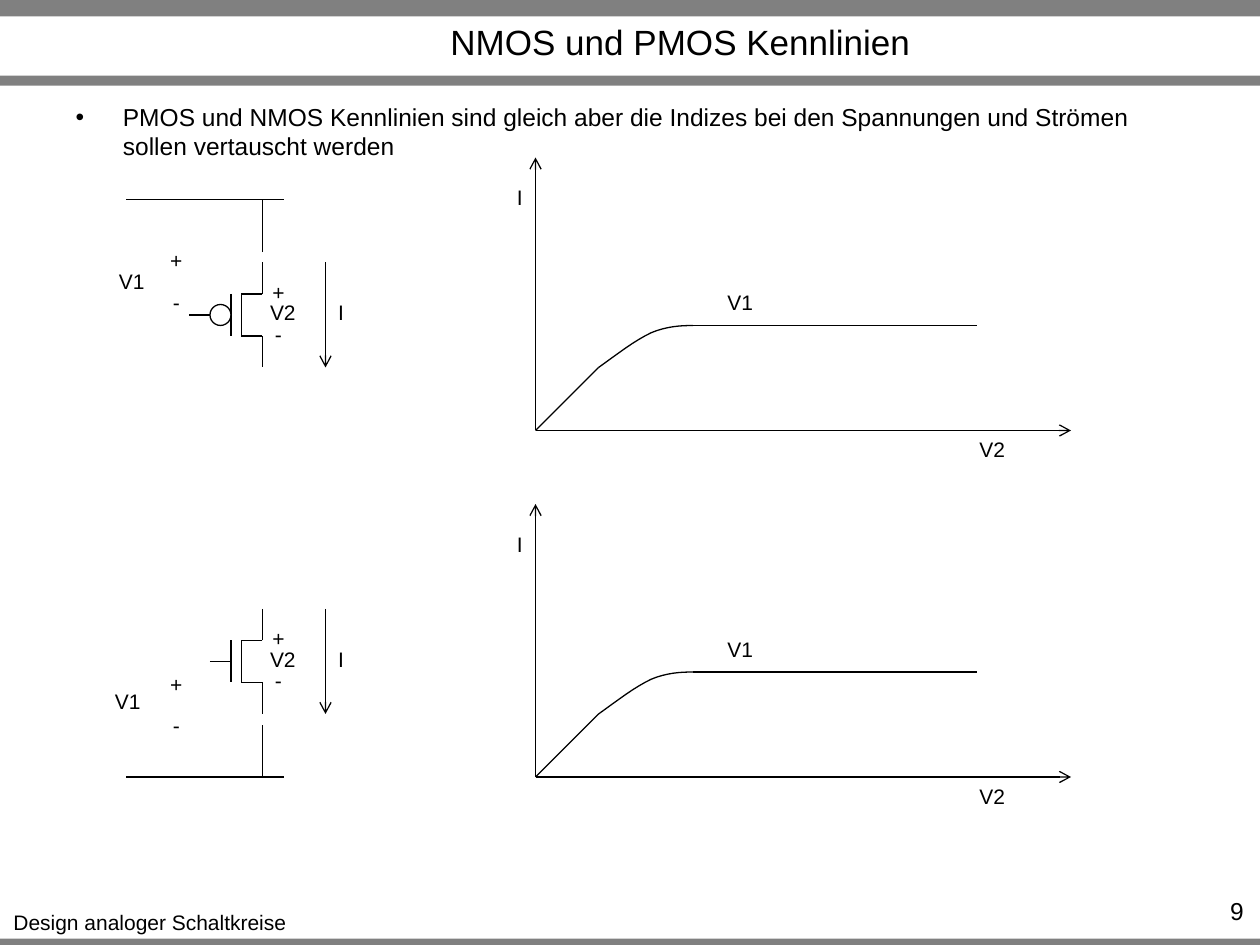
import pptx
import pptx.util
import pptx.dml.color
import pptx.enum.shapes
import pptx.enum.text
import pptx.oxml.ns
import lxml.etree

Pt = pptx.util.Pt
RGB = pptx.dml.color.RGBColor
SHAPE = pptx.enum.shapes.MSO_SHAPE
ALIGN = pptx.enum.text.PP_ALIGN
ANCHOR = pptx.enum.text.MSO_ANCHOR
AUTO_SIZE = pptx.enum.text.MSO_AUTO_SIZE

# Content, all lengths in points
TITLE = "NMOS und PMOS Kennlinien"
STATEMENT = ("PMOS und NMOS Kennlinien sind gleich aber die Indizes bei den "
             "Spannungen und Strömen sollen vertauscht werden")
FOOTER = "Design analoger Schaltkreise"
PAGE = "9"

THEME = {
    "ink": RGB(0, 0, 0), "paper": RGB(255, 255, 255), "bar": RGB(128, 128, 128),
    "font": "Arial", "title": 20, "body": 14, "label": 12, "line": 0.75,
}
WIDTH, HEIGHT = 720, 540
ROW_GAP = 198  # PMOS row to NMOS row
BARS = [(536.4, 3.6), (0, 9.4), (43.2, 5.8)]  # top, height
LABEL_HEIGHT = 21.6
LABEL_WIDTHS = {"V1": 29.5, "V2": 29.5, "I": 18, "+": 21.6, "-": 18.7, FOOTER: 171.4}

# Parts found in both rows, at the place of the first row
TRANSISTOR = [
    (150, 168, 138, 168), (138, 168, 138, 192), (120, 180, 132, 180),
    (132, 168, 132, 192), (150, 192, 138, 192), (150, 192, 150, 210),
    (150, 150, 150, 168),
]
CURRENT = (186, 150, 186, 210)
AXES = [(306, 246, 612, 246), (306, 246, 306, 90)]
CURVE_LINES = [(306, 246, 342, 210), (396, 186, 558, 186)]
KNEE = [
    [(342, 210), (352.8, 202.3), (362.9, 194.4), (372.2, 190.1)],
    [(372.2, 190.1), (380.9, 186.5), (388.8, 186), (396, 186)],
]
ROW_LABELS = [  # text, centre x, centre y
    ("I", 194.8, 178.6), ("V2", 161.6, 178.6), ("+", 159.1, 167), ("-", 159.1, 190.8),
    ("V2", 567, 257), ("I", 297, 113), ("V1", 423, 172.8),
]

# Parts of one row only
SUPPLY_LINES = [
    (150, 144, 150, 114), (162, 114, 72, 114),
    (150, 444, 150, 414), (162, 444, 72, 444),
]
PMOS_GATE_LEAD = (120, 180, 108, 180)
PMOS_BUBBLE = (120, 174, 12, 12)
GATE_LABELS = [
    ("+", 100.8, 149), ("-", 100.8, 172.8), ("V1", 75.2, 160.6),
    ("+", 100.8, 391), ("-", 100.8, 414.7), ("V1", 73, 401),
]

presentation = pptx.Presentation()
presentation.slide_width, presentation.slide_height = Pt(WIDTH), Pt(HEIGHT)
slide = presentation.slides.add_slide(presentation.slide_layouts[1])
shapes = slide.shapes


def write(shape, text, size, align, **frame_format):
    frame = shape.text_frame
    frame_format = {"auto_size": AUTO_SIZE.NONE, "word_wrap": True, **frame_format}
    for key, value in frame_format.items():
        setattr(frame, key, value)
    paragraph = frame.paragraphs[0]
    paragraph.text = text
    paragraph_format = {"alignment": align, "space_before": Pt(0)}
    for key, value in paragraph_format.items():
        setattr(paragraph, key, value)
    font = paragraph.runs[0].font
    for key, value in {"name": THEME["font"], "size": Pt(size), "bold": False}.items():
        setattr(font, key, value)
    font.color.rgb = THEME["ink"]
    return paragraph


def place(shape, left, top, width, height):
    box = {"left": left, "top": top, "width": width, "height": height}
    for key, value in box.items():
        setattr(shape, key, Pt(value))


def add_label(text, x, y):
    width = LABEL_WIDTHS[text]
    box = shapes.add_textbox(Pt(x - width / 2), Pt(y - LABEL_HEIGHT / 2),
                             Pt(width), Pt(LABEL_HEIGHT))
    write(box, text, THEME["label"], ALIGN.CENTER, word_wrap=False)


def ink_line(line):
    line.color.rgb = THEME["ink"]
    line.width = Pt(THEME["line"])


def add_line(x1, y1, x2, y2, shift=0, arrow=False):
    line = shapes.add_connector(pptx.enum.shapes.MSO_CONNECTOR.STRAIGHT,
                                Pt(x1), Pt(y1 + shift), Pt(x2), Pt(y2 + shift))
    ink_line(line.line)
    if arrow:
        lxml.etree.SubElement(line.line._get_or_add_ln(),
                              pptx.oxml.ns.qn("a:tailEnd"), type="arrow")
    lxml.etree.SubElement(line._element.spPr, pptx.oxml.ns.qn("a:effectLst"))


def bezier(points, t):
    weights = ((1 - t) ** 3, 3 * t * (1 - t) ** 2, 3 * t * t * (1 - t), t ** 3)
    return [sum(w * point[axis] for w, point in zip(weights, points)) for axis in (0, 1)]


def add_knee(shift):
    samples = [bezier(part, step / 8) for part in KNEE for step in range(1, 9)]
    x, y = KNEE[0][0]
    builder = shapes.build_freeform(Pt(x), Pt(y + shift))
    builder.add_line_segments([(Pt(x), Pt(y + shift)) for x, y in samples], close=False)
    knee = builder.convert_to_shape()
    knee.shadow.inherit = False
    knee.fill.background()
    ink_line(knee.line)


# Bars and footer
for top, height in BARS:
    bar = shapes.add_shape(SHAPE.RECTANGLE, 0, Pt(top), Pt(WIDTH), Pt(height))
    bar.shadow.inherit = False
    bar.fill.solid()
    bar.fill.fore_color.rgb = THEME["bar"]
    bar.line.fill.background()
add_label(FOOTER, LABEL_WIDTHS[FOOTER] / 2, 527)
page_number = shapes.add_textbox(Pt(655.2), Pt(508.3), Pt(62.6), Pt(17.3))
write(page_number, PAGE, THEME["body"], ALIGN.RIGHT)

# Title and statement
title = shapes.title
place(title, 93.6, 10, 590.4, 27.4)
write(title, TITLE, THEME["title"], ALIGN.CENTER, vertical_anchor=ANCHOR.MIDDLE)
statement = slide.placeholders[1]
place(statement, 36, 54.7, 648, 35.3)
bullet = write(statement, STATEMENT, THEME["body"], ALIGN.LEFT, vertical_anchor=ANCHOR.TOP)
bullet_properties = bullet._p.get_or_add_pPr()
for key, value in {"marL": Pt(27), "indent": -Pt(27)}.items():
    bullet_properties.set(key, str(value))

# Transistor and characteristic of each row
for shift in (0, ROW_GAP):
    for segment in TRANSISTOR + CURVE_LINES:
        add_line(*segment, shift)
    for segment in [CURRENT] + AXES:
        add_line(*segment, shift, arrow=True)
    add_knee(shift)
    for text, x, y in ROW_LABELS:
        add_label(text, x, y + shift)

# PMOS gate
bubble = shapes.add_shape(SHAPE.OVAL, *map(Pt, PMOS_BUBBLE))
bubble.shadow.inherit = False
bubble.fill.solid()
bubble.fill.fore_color.rgb = THEME["paper"]
ink_line(bubble.line)
add_line(*PMOS_GATE_LEAD)

# Supply rails and gate voltages
for segment in SUPPLY_LINES:
    add_line(*segment)
for label in GATE_LABELS:
    add_label(*label)

presentation.save("out.pptx")
